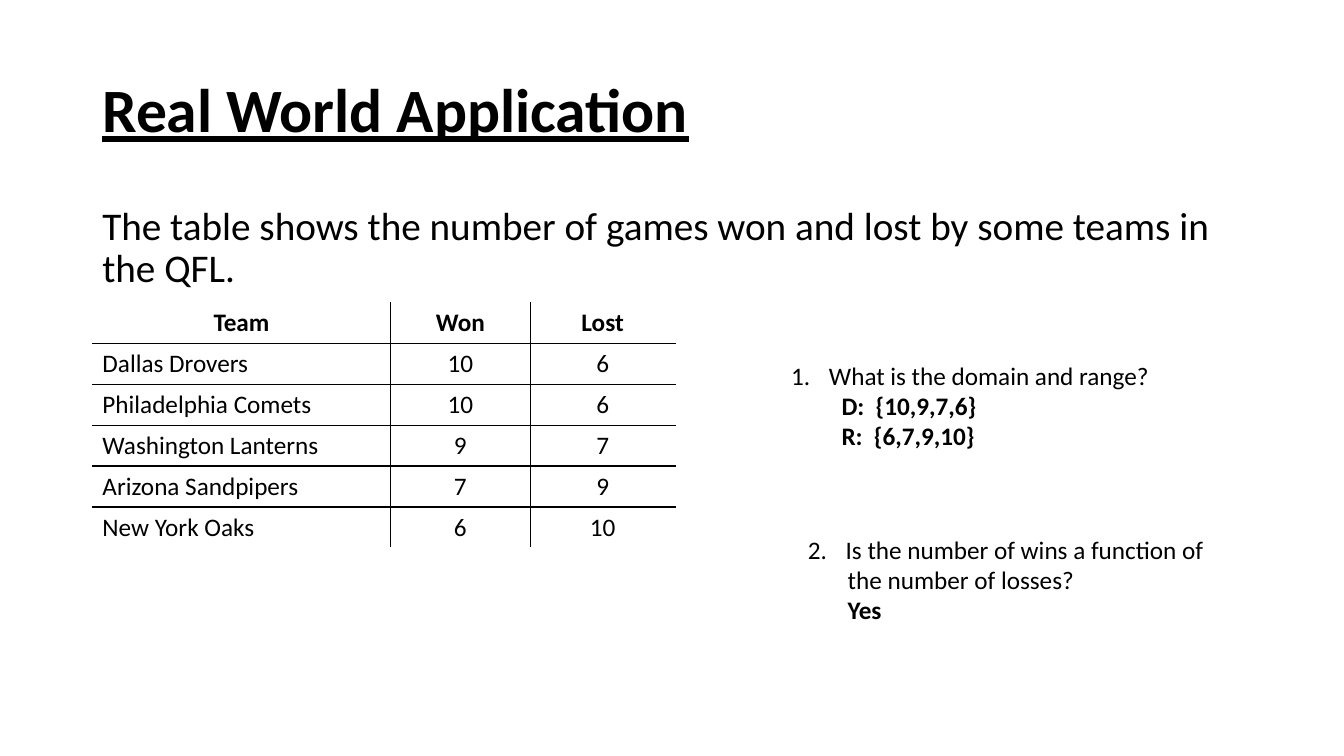
from typing import NamedTuple

from lxml.etree import SubElement
from pptx import Presentation
from pptx.dml.color import RGBColor
from pptx.enum.text import MSO_ANCHOR, PP_ALIGN
from pptx.oxml.ns import qn
from pptx.util import Emu, Pt

PX = 9525  # EMU per px, 96 px to the inch
BLACK = RGBColor(0x00, 0x00, 0x00)
WHITE = RGBColor(0xFF, 0xFF, 0xFF)
FONT = "Calibri"


class Box(NamedTuple):
    left: int
    top: int
    width: int
    height: int


class Line(NamedTuple):
    text: str
    size: int = 18
    bold: bool = False
    underline: bool = False
    indent: int = 0
    number: int = 0
    spacing: float = 1.0
    before: int = 0


class TextBlock(NamedTuple):
    box: Box
    lines: list[Line]
    anchor: MSO_ANCHOR = MSO_ANCHOR.TOP


TEXT_BLOCKS = [
    TextBlock(Box(88, 38, 1104, 139),
              [Line("Real World Application", 44, bold=True, underline=True, spacing=0.9)],
              MSO_ANCHOR.MIDDLE),
    TextBlock(Box(88, 192, 1104, 457),
              [Line("The table shows the number of games won and lost by some teams in the QFL.",
                    28, spacing=0.9, before=10)]),
    TextBlock(Box(744, 338, 364, 97),
              [Line("What is the domain and range?", indent=36, number=1),
               Line("D:  {10,9,7,6}", bold=True, indent=48),
               Line("R:  {6,7,9,10}", bold=True, indent=48)]),
    TextBlock(Box(760, 504, 401, 97),
              [Line("Is the number of wins a function of", indent=36, number=2),
               Line("the number of losses?", indent=38),
               Line("Yes", bold=True, indent=38)]),
]

TABLE_BOX = Box(88, 288, 555, 234)
COLUMN_WIDTHS = [284, 133, 138]
STANDINGS = [
    ("Team", "Won", "Lost"),
    ("Dallas Drovers", "10", "6"),
    ("Philadelphia Comets", "10", "6"),
    ("Washington Lanterns", "9", "7"),
    ("Arizona Sandpipers", "7", "9"),
    ("New York Oaks", "6", "10"),
]


def emu(box: Box) -> list[Emu]:
    return [Emu(v * PX) for v in box]


def style_runs(p, size: int, bold: bool, underline: bool = False) -> None:
    for r in p.runs:
        r.font.name = FONT
        r.font.size = Pt(size)
        r.font.bold = bold
        r.font.underline = underline
        r.font.color.rgb = BLACK


def add_text(slide, block: TextBlock) -> None:
    tf = slide.shapes.add_textbox(*emu(block.box)).text_frame
    tf.word_wrap = True
    tf.vertical_anchor = block.anchor
    for i, line in enumerate(block.lines):
        p = tf.add_paragraph() if i else tf.paragraphs[0]
        p.text = line.text
        p.line_spacing = line.spacing
        p.space_before = Pt(line.before)
        style_runs(p, line.size, line.bold, line.underline)
        pPr = p._p.get_or_add_pPr()
        pPr.set("marL", str(line.indent * PX))
        if line.number:
            pPr.set("indent", str(-line.indent * PX))
            SubElement(pPr, qn("a:buAutoNum"), type="arabicPeriod", startAt=str(line.number))


def set_borders(cell, colors: dict[str, RGBColor]) -> None:
    tcPr = cell._tc.get_or_add_tcPr()
    for side, color in colors.items():
        ln = SubElement(tcPr, qn(f"a:ln{side}"), w=str(Pt(1)))
        fill = SubElement(ln, qn("a:solidFill"))
        SubElement(fill, qn("a:srgbClr"), val=str(color))


def add_standings(slide) -> None:
    last_row, last_col = len(STANDINGS) - 1, len(COLUMN_WIDTHS) - 1
    table = slide.shapes.add_table(last_row + 1, last_col + 1, *emu(TABLE_BOX)).table
    table.first_row = table.horz_banding = False
    for column, width in zip(table.columns, COLUMN_WIDTHS):
        column.width = Emu(width * PX)
    for r, row in enumerate(STANDINGS):
        for c, text in enumerate(row):
            cell = table.cell(r, c)
            cell.text = text
            p = cell.text_frame.paragraphs[0]
            p.alignment = PP_ALIGN.LEFT if r and not c else PP_ALIGN.CENTER
            style_runs(p, 18, bold=r == 0)
            # Inner rules are black, the outer edge is white
            set_borders(cell, {
                "L": BLACK if c else WHITE,
                "R": BLACK if c < last_col else WHITE,
                "T": BLACK if r else WHITE,
                "B": BLACK if r < last_row else WHITE,
            })
            cell.fill.solid()
            cell.fill.fore_color.rgb = WHITE


def main() -> None:
    prs = Presentation()
    prs.slide_width, prs.slide_height = Emu(1280 * PX), Emu(720 * PX)
    slide = prs.slides.add_slide(prs.slide_layouts[6])

    # Title, introduction and questions
    for block in TEXT_BLOCKS:
        add_text(slide, block)

    # Table of games won and lost
    add_standings(slide)

    prs.save("out.pptx")


if __name__ == "__main__":
    main()
